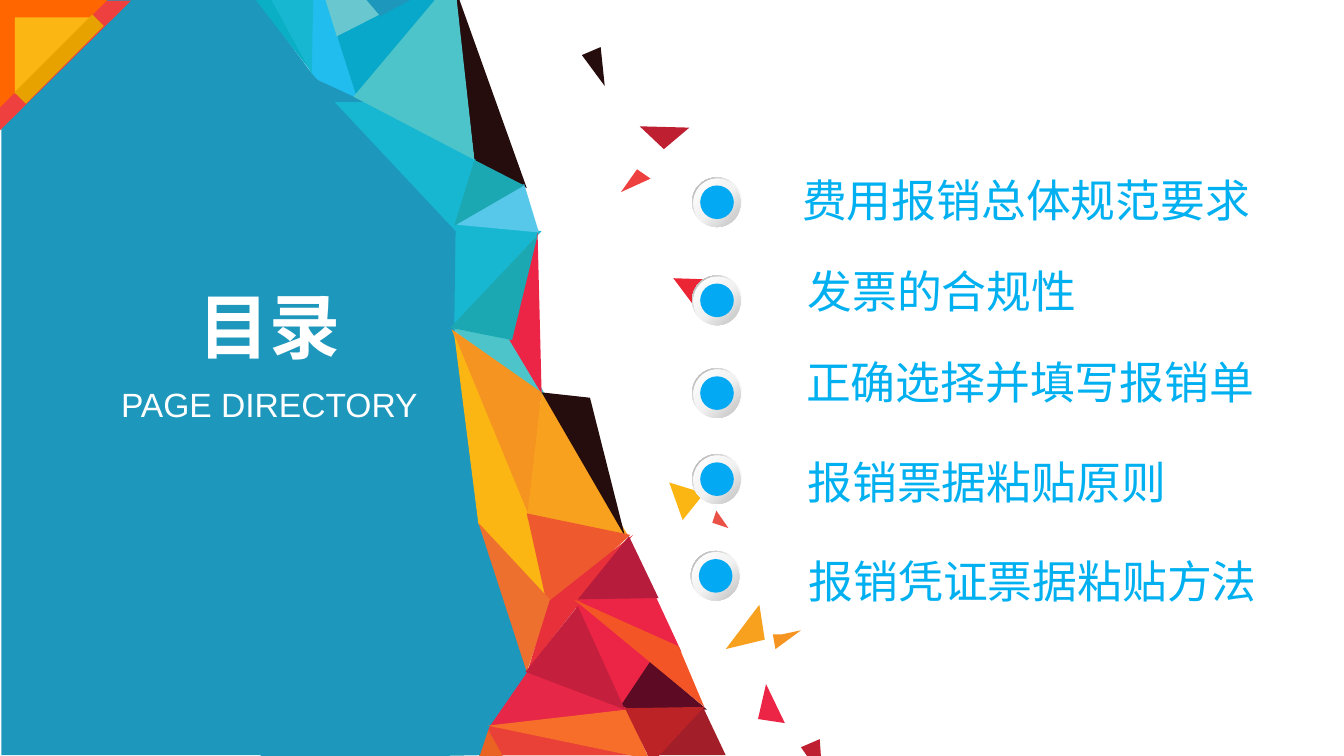
import copy
import pptx
import pptx.dml.color
import pptx.enum.shapes
import pptx.enum.text
import pptx.oxml.ns
import pptx.util
from pptx.dml.color import RGBColor
from pptx.enum.shapes import MSO_SHAPE
from pptx.util import Inches

WHITE = RGBColor(0xFF, 0xFF, 0xFF)
PALE_GREY = RGBColor(0xF2, 0xF2, 0xF2)
SILVER = RGBColor(0xBF, 0xBF, 0xBF)
GREY = RGBColor(0xA6, 0xA6, 0xA6)
TOPIC_BLUE = RGBColor(0x00, 0xB0, 0xF0)
DOT_BLUE = RGBColor(0x03, 0xA9, 0xF3)
PANEL_BLUE = RGBColor(0x1D, 0x97, 0xBC)
BRIGHT_BLUE = RGBColor(0x21, 0xBD, 0xEE)
LIGHT_BLUE = RGBColor(0x57, 0xC8, 0xEA)
SEA_BLUE = RGBColor(0x08, 0xA8, 0xCA)
CYAN = RGBColor(0x17, 0xB7, 0xD1)
DEEP_CYAN = RGBColor(0x0A, 0xAE, 0xC5)
TEAL = RGBColor(0x1B, 0xA8, 0xB2)
AQUA = RGBColor(0x4D, 0xC4, 0xCA)
PALE_AQUA = RGBColor(0x69, 0xC7, 0xCF)
BLACK_BROWN = RGBColor(0x26, 0x0D, 0x0D)
PLUM = RGBColor(0x5D, 0x0B, 0x24)
MAROON = RGBColor(0xA2, 0x1F, 0x29)
BRICK = RGBColor(0xBC, 0x23, 0x26)
WINE = RGBColor(0xB7, 0x1C, 0x3C)
CARMINE = RGBColor(0xBE, 0x1F, 0x31)
CRIMSON = RGBColor(0xC4, 0x1F, 0x3D)
PINK_RED = RGBColor(0xEC, 0x25, 0x46)
ROSE = RGBColor(0xE7, 0x27, 0x48)
RED = RGBColor(0xEB, 0x25, 0x34)
SCARLET = RGBColor(0xE7, 0x30, 0x39)
TOMATO = RGBColor(0xE9, 0x41, 0x38)
CORNER_RED = RGBColor(0xEE, 0x40, 0x3F)
CORAL = RGBColor(0xEA, 0x52, 0x48)
RUST = RGBColor(0xEE, 0x59, 0x2E)
FLAME = RGBColor(0xF4, 0x55, 0x26)
DARK_ORANGE = RGBColor(0xEB, 0x63, 0x23)
CORNER_ORANGE = RGBColor(0xFF, 0x66, 0x00)
COPPER = RGBColor(0xED, 0x70, 0x2E)
PUMPKIN = RGBColor(0xF6, 0x6E, 0x29)
ORANGE = RGBColor(0xF5, 0x94, 0x21)
AMBER = RGBColor(0xF8, 0xA1, 0x1E)
YELLOW = RGBColor(0xFB, 0xB6, 0x14)
OCHRE = RGBColor(0xE7, 0xA2, 0x00)

MOSAIC = [
    (PINK_RED, [(4.22, 4.38), (4.64, 5.28), (4.9, 4.96)]),
    (PLUM, [(4.6, 5.28), (5.26, 5.28), (4.84, 4.92)]),
    (BLACK_BROWN, [(3.38, -0.11), (3.92, 1.4), (3.53, 1.2)]),
    (MAROON, [(5.23, 5.26), (5.4, 5.62), (4.83, 5.62)]),
    (PINK_RED, [(4.25, 4.45), (5.07, 4.85), (4.88, 4.44)]),
    (TOMATO, [(3.57, 5.38), (3.69, 5.62), (4.87, 5.62)]),
    (ROSE, [(3.94, 4.97), (3.61, 5.41), (4.69, 5.28)]),
    (AQUA, [(3.35, 2.44), (3.84, 2.53), (4.09, 3)]),
    (CYAN, [(3.38, 1.63), (4.03, 1.72), (3.35, 2.45)]),
    (LIGHT_BLUE, [(3.37, 1.67), (3.9, 1.37), (4.01, 1.73)]),
    (DARK_ORANGE, [(3.61, 5.39), (3.56, 5.64), (3.75, 5.64)]),
    (BRIGHT_BLUE, [(2.33, -0.05), (2.42, -0.03), (2.66, 0.74), (2.31, 0.57), (2.31, 0.26)]),
    (PANEL_BLUE, [(1.92, 0.01), (2.33, 0.56), (3.39, 1.71), (3.38, 2.44), (3.56, 3.88),
                  (3.93, 4.99), (3.64, 5.41), (3.57, 5.62), (1.94, 5.65)]),
    (DEEP_CYAN, [(1.88, -0.03), (2.03, -0.01), (2.32, 0.54)]),
    (CYAN, [(2.02, 0), (2.33, -0.01), (2.32, 0.55)]),
    (PANEL_BLUE, [(2.33, 0.58), (2.74, 0.77), (2.5, 0.78)]),
    (CYAN, [(2.74, 0.76), (3.54, 1.19), (3.39, 1.72), (2.49, 0.76)]),
    (TEAL, [(3.53, 1.19), (3.9, 1.38), (3.38, 1.68)]),
    (PALE_AQUA, [(2.41, -0.04), (2.65, -0.1), (2.85, 0.11), (2.51, 0.28)]),
    (SEA_BLUE, [(2.51, 0.27), (2.65, 0.71), (3.38, -0.17), (3.04, 0)]),
    (PINK_RED, [(4, 1.73), (3.79, 2.53), (4.03, 2.93)]),
    (AQUA, [(3.38, -0.17), (3.53, 1.19), (2.63, 0.72)]),
    (TEAL, [(4, 1.75), (3.81, 2.53), (3.35, 2.44)]),
    (ORANGE, [(3.36, 2.45), (4.03, 2.92), (3.94, 3.87)]),
    (YELLOW, [(3.38, 2.49), (3.56, 3.9), (4.09, 4.49), (3.94, 3.85)]),
    (AMBER, [(4.03, 2.92), (3.92, 3.86), (4.67, 3.98)]),
    (BLACK_BROWN, [(4.03, 2.92), (4.39, 2.96), (4.65, 3.99)]),
    (RUST, [(3.92, 3.82), (4.08, 4.54), (4.69, 3.98)]),
    (COPPER, [(3.56, 3.89), (4.1, 4.47), (3.92, 5)]),
    (SCARLET, [(4.09, 4.47), (4.71, 3.98), (3.93, 4.98)]),
    (WINE, [(4.3, 4.46), (4.9, 4.45), (4.68, 3.99)]),
    (CRIMSON, [(4.3, 4.51), (4.65, 5.28), (3.91, 5)]),
    (FLAME, [(4.27, 4.46), (5.24, 5.26), (5.05, 4.81)]),
    (PUMPKIN, [(3.63, 5.4), (4.67, 5.28), (4.83, 5.65)]),
    (BRICK, [(4.65, 5.27), (5.24, 5.26), (4.85, 5.68)]),
    (PANEL_BLUE, [(2.71, -0.02), (2.83, 0.12), (3.13, -0.04)]),
]
LOOSE_SHARDS = [
    (CORNER_RED, [(4.74, 1.26), (4.62, 1.43), (4.84, 1.33)]),
    (RED, [(5.01, 2.07), (5.3, 2.08), (5.25, 2.39)]),
    (CARMINE, [(4.76, 0.94), (5.13, 0.95), (4.94, 1.11)]),
    (YELLOW, [(4.98, 3.59), (5.24, 3.67), (5.08, 3.87)]),
    (AMBER, [(5.65, 4.5), (5.4, 4.83), (5.69, 4.76)]),
    (PINK_RED, [(5.7, 5.09), (5.64, 5.35), (5.84, 5.38)]),
    (ORANGE, [(5.75, 4.72), (5.82, 4.72), (5.96, 4.69), (5.77, 4.83)]),
    (CORAL, [(5.33, 3.8), (5.42, 3.93), (5.3, 3.89)]),
    (BLACK_BROWN, [(4.47, 0.35), (4.33, 0.41), (4.5, 0.64)]),
    (CARMINE, [(6.1, 5.5), (5.96, 5.56), (6.12, 5.79)]),
]
CORNER = [
    (MSO_SHAPE.RIGHT_TRIANGLE, (0, 0, 0.97, 0.98), CORNER_RED, 90),
    (MSO_SHAPE.RIGHT_TRIANGLE, (0, 0, 0.8, 0.8), CORNER_ORANGE, 90),
    (MSO_SHAPE.RIGHT_TRIANGLE, (0.11, 0.13, 0.57, 0.57), YELLOW, 90),
    (MSO_SHAPE.RECTANGLE, (0.38, 0.03, 0.12, 0.82), OCHRE, 45),
]
TOPICS = [
    ("费用报销总体规范要求", (5.68, 1.31, 4.2, 0.42), 0.8, (5.15, 1.32)),
    ("发票的合规性", (5.72, 1.99, 3.92, 0.42), 0.8, (5.15, 2.05)),
    ("正确选择并填写报销单", (5.71, 2.67, 4.02, 0.42), 0.8, (5.15, 2.74)),
    ("报销票据粘贴原则", (5.72, 3.41, 3.84, 0.42), 0.8, (5.15, 3.38)),
    ("报销凭证票据粘贴方法", (5.73, 4.03, 3.76, 0.55), 1.1, (5.14, 4.1)),
]
RIM_STOPS = [(0, WHITE), (0.55, PALE_GREY), (1, GREY)]
FACE_STOPS = [(0, WHITE), (0.51, PALE_GREY), (1, SILVER)]


def paint(shape, color):
    shape.shadow.inherit = False
    shape.line.fill.background()
    shape.fill.solid()
    shape.fill.fore_color.rgb = color


def paint_gradient(shape, stops, angle):
    shape.fill.gradient()
    stop_list = next(shape._element.spPr.iter(pptx.oxml.ns.qn("a:gsLst")))
    stop_list.insert(1, copy.deepcopy(stop_list[0]))
    for stop, (position, color) in zip(shape.fill.gradient_stops, stops):
        stop.position = position
        stop.color.rgb = color
    shape.fill.gradient_angle = angle


def add_preset(shapes, kind, place, color, rotation=0):
    shape = shapes.add_shape(kind, *map(Inches, place))
    shape.rotation = rotation
    paint(shape, color)
    return shape


def add_shard(shapes, color, corners):
    points = [(Inches(x), Inches(y)) for x, y in corners]
    builder = shapes.build_freeform(*points[0])
    builder.add_line_segments(points[1:], close=True)
    paint(builder.convert_to_shape(), color)


def add_text(shapes, text, place, size, font_name, color, bold=False, wrap=False):
    box = shapes.add_textbox(*map(Inches, place))
    box.text_frame.word_wrap = wrap
    box.text_frame.auto_size = pptx.enum.text.MSO_AUTO_SIZE.SHAPE_TO_FIT_TEXT
    para = box.text_frame.paragraphs[0]
    span = para.add_run()
    span.text = text
    span.font.size = pptx.util.Pt(size)
    span.font.name = font_name
    span.font.bold = bold
    span.font.color.rgb = color
    east_asian = copy.deepcopy(span.font._element.find(pptx.oxml.ns.qn("a:latin")))
    east_asian.tag = pptx.oxml.ns.qn("a:ea")
    span.font._element.append(east_asian)
    return para


def add_topic(shapes, text, place, line_spacing):
    para = add_text(shapes, text, place, 24, "Noto Sans CJK SC", TOPIC_BLUE, wrap=True)
    para.line_spacing = line_spacing
    properties = para._p.get_or_add_pPr()
    properties.set("marL", str(Inches(0.68)))
    properties.set("indent", str(Inches(-0.49)))


def add_button(shapes, left, top):
    button = shapes.add_group_shape().shapes
    rim = add_preset(button, MSO_SHAPE.DONUT, (left, top, 0.37, 0.37), GREY)
    rim.adjustments[0] = 0.05
    paint_gradient(rim, RIM_STOPS, 135)
    face = add_preset(button, MSO_SHAPE.OVAL, (left + 0.01, top + 0.01, 0.35, 0.36), SILVER)
    paint_gradient(face, FACE_STOPS, 315)
    add_preset(button, MSO_SHAPE.OVAL, (left + 0.06, top + 0.06, 0.25, 0.25), DOT_BLUE)


def main():
    deck = pptx.Presentation()
    deck.slide_width = Inches(10)
    deck.slide_height = deck.slide_width * 9 // 16
    page = deck.slides.add_slide(deck.slide_layouts[6])
    shapes = page.shapes
    add_preset(shapes, MSO_SHAPE.RECTANGLE, (0.01, -0.01, 2.06, 5.63), PANEL_BLUE)
    for color, corners in MOSAIC + LOOSE_SHARDS:
        add_shard(shapes, color, corners)
    for kind, place, color, rotation in CORNER:
        add_preset(shapes, kind, place, color, rotation)
    for text, place, line_spacing, button_place in TOPICS:
        add_topic(shapes, text, place, line_spacing)
        add_button(shapes, *button_place)
    for text, place, size, bold in [("目录", (1.37, 2.05, 1.27, 0.74), 38, True),
                                    ("PAGE DIRECTORY", (0.79, 2.81, 2.43, 0.4), 18, False)]:
        para = add_text(shapes, text, place, size, "Arial", WHITE, bold)
        para.alignment = pptx.enum.text.PP_ALIGN.CENTER
    deck.save("out.pptx")


if __name__ == "__main__":
    main()
